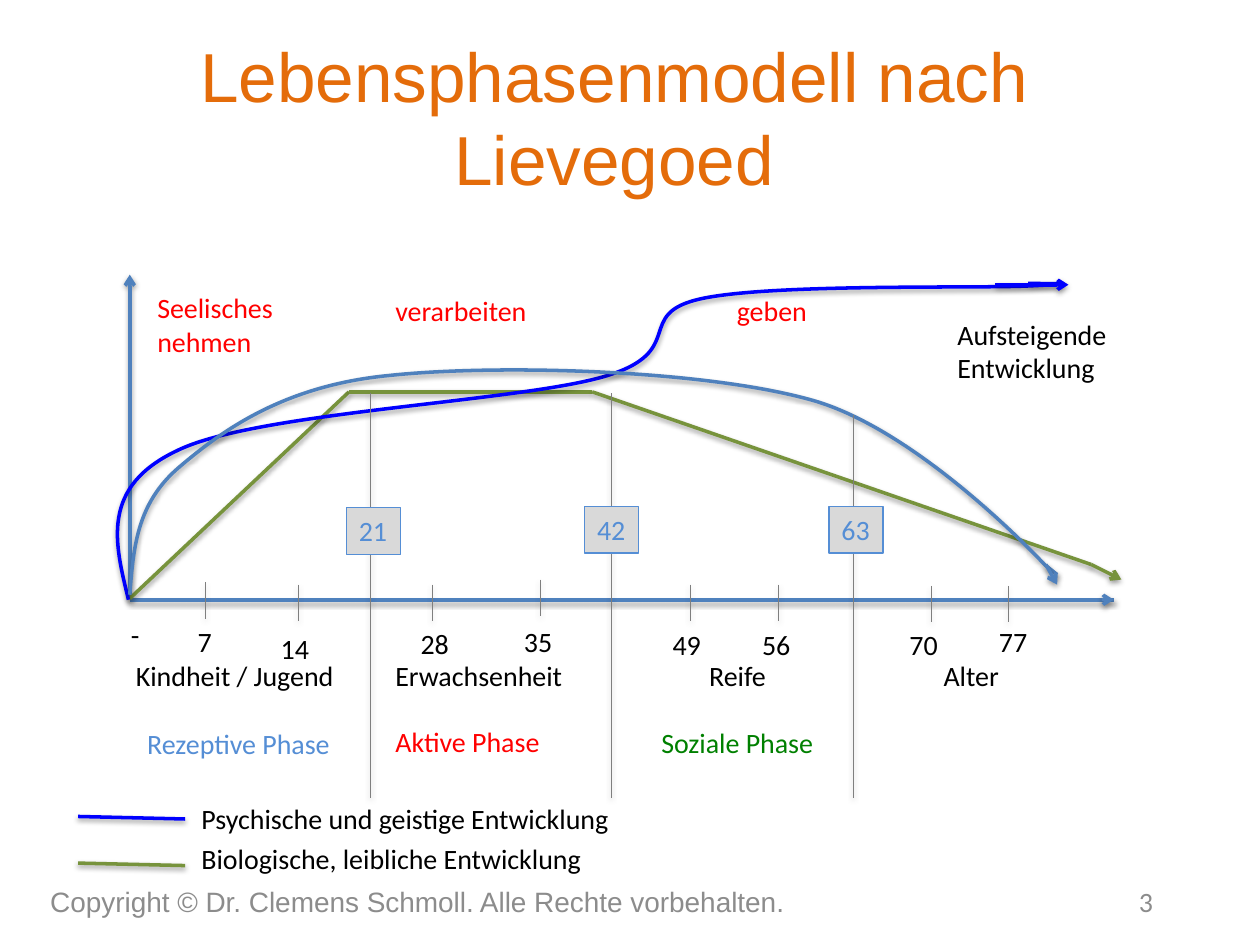
from dataclasses import dataclass

from lxml.etree import SubElement
from pptx import Presentation
from pptx.dml.color import RGBColor
from pptx.enum.shapes import MSO_CONNECTOR, MSO_SHAPE
from pptx.enum.text import MSO_ANCHOR, MSO_AUTO_SIZE, PP_ALIGN
from pptx.oxml.ns import qn
from pptx.util import Inches, Pt

BLACK, RED, GREEN, GREY = "000000", "FF0000", "008000", "8C8C8C"
AXIS, MIND, BODY, GUIDE = "4F81BD", "0000FF", "77933C", "7F7F7F"
PHASE, BADGE = "558ED5", "D9D9D9"
LINE_HEIGHT = 0.37
TICK_LENGTH = 0.29
GUIDE_BOTTOM = 6.33

Point = tuple[float, float]


@dataclass(frozen=True)
class Label:
    text: str
    left: float
    top: float
    width: float
    color: str = BLACK
    height: float = LINE_HEIGHT


@dataclass(frozen=True)
class Tick:
    age: str
    x: float
    top: float
    label_left: float
    label_top: float
    label_width: float = 0.43


@dataclass(frozen=True)
class Threshold:
    age: str
    x: float
    top: float
    badge_left: float
    badge_top: float


@dataclass(frozen=True)
class Stroke:
    start: Point
    end: Point
    color: str
    arrow: bool = False
    weight: float = 2


@dataclass(frozen=True)
class Curve:
    bounds: tuple[float, float, float, float]
    start: Point
    bends: list[tuple[Point, Point, Point]]
    color: str
    tail: tuple[Point, ...] = ()


AXES = [
    Stroke((1.03, 4.75), (1.03, 2.18), AXIS, arrow=True),
    Stroke((1.03, 4.76), (8.84, 4.76), AXIS),
]
TICKS = [
    Tick("7", 1.63, 4.62, 1.47, 4.91, 0.32),
    Tick("14", 2.37, 4.64, 2.13, 4.96),
    Tick("28", 3.43, 4.64, 3.24, 4.92),
    Tick("35", 4.29, 4.6, 4.06, 4.91),
    Tick("49", 5.48, 4.64, 5.24, 4.93),
    Tick("56", 6.18, 4.64, 5.95, 4.93),
    Tick("70", 7.39, 4.65, 7.12, 4.93),
    Tick("77", 8, 4.65, 7.83, 4.91),
]
THRESHOLDS = [
    Threshold("21", 2.94, 3.12, 2.75, 4.03),
    Threshold("42", 4.85, 3.12, 4.64, 4.02),
    Threshold("63", 6.77, 3.29, 6.58, 4.02),
]
BODY_POINTS = [(1.03, 4.75), (2.77, 3.11), (4.7, 3.11), (8.66, 4.48), (8.9, 4.6)]
MIND_CURVE = Curve(
    (0.93, 2.25, 7.48, 2.51),
    (1.02, 4.76),
    [
        ((0.91, 4.31), (0.79, 3.86), (1.42, 3.57)),
        ((2.05, 3.27), (4.1, 3.19), (4.79, 2.99)),
        ((5.48, 2.79), (5.01, 2.49), (5.57, 2.37)),
        ((6.13, 2.25), (7.73, 2.29), (8.16, 2.27)),
        ((8.59, 2.25), (8.37, 2.25), (8.16, 2.25)),
    ],
    MIND,
)
LIFE_CURVE = Curve(
    (1.03, 2.93, 7.36, 1.79),
    (1.03, 4.72),
    [
        ((1.06, 4.36), (1.08, 4), (1.42, 3.71)),
        ((1.76, 3.42), (2.25, 3.06), (3.09, 2.98)),
        ((3.93, 2.89), (5.59, 2.93), (6.46, 3.18)),
        ((7.32, 3.43), (8.29, 4.48), (8.29, 4.48)),
    ],
    AXIS,
    tail=((8.39, 4.56),),
)
ARROW_TIPS = [
    Stroke((7.9, 2.26), (8.48, 2.26), MIND, arrow=True),
    Stroke((8.3, 4.48), (8.39, 4.64), AXIS, arrow=True),
    Stroke((8.81, 4.76), (8.84, 4.76), AXIS, arrow=True),
]
LEGEND_KEYS = [
    Stroke((0.62, 6.48), (1.47, 6.5), MIND),
    Stroke((0.62, 6.85), (1.47, 6.87), BODY),
]
LABELS = [
    Label("-", 0.94, 4.85, 0.27),
    Label("Kindheit / Jugend", 0.98, 5.18, 1.79),
    Label("Erwachsenheit", 3.04, 5.18, 1.54),
    Label("Reife", 5.53, 5.18, 0.67),
    Label("Alter", 7.39, 5.18, 0.65),
    Label("Seelisches\nnehmen", 1.15, 2.26, 1.13, RED, 0.64),
    Label("verarbeiten", 3.04, 2.28, 1.26, RED),
    Label("geben", 5.75, 2.28, 0.77, RED),
    Label("Aufsteigende\nEntwicklung", 7.5, 2.47, 1.41, BLACK, 0.64),
    Label("Rezeptive Phase", 1.07, 5.72, 1.68, PHASE),
    Label("Aktive Phase", 3.04, 5.7, 1.36, RED),
    Label("Soziale Phase", 5.15, 5.71, 1.43, GREEN),
    Label("Psychische und geistige Entwicklung", 1.5, 6.31, 3.49),
    Label("Biologische, leibliche Entwicklung", 1.5, 6.63, 3.25),
]


def rgb(color: str) -> RGBColor:
    return RGBColor.from_string(color)


def write(frame, text, *, color=BLACK, size=16, font="Calibri", align=PP_ALIGN.LEFT,
          anchor=MSO_ANCHOR.TOP, wrap=False) -> None:
    frame.text = text
    frame.word_wrap = wrap
    frame.auto_size = MSO_AUTO_SIZE.NONE if wrap else MSO_AUTO_SIZE.SHAPE_TO_FIT_TEXT
    frame.vertical_anchor = anchor
    for paragraph in frame.paragraphs:
        paragraph.alignment = align
        paragraph.font.name = font
        paragraph.font.size = Pt(size)
        paragraph.font.color.rgb = rgb(color)


def add_label(shapes, label: Label, **text_format) -> None:
    box = shapes.add_textbox(*map(Inches, (label.left, label.top, label.width, label.height)))
    write(box.text_frame, label.text, color=label.color, **text_format)


def add_soft_shadow(shape) -> None:
    effects = SubElement(shape._element.spPr, qn("a:effectLst"))
    shadow = SubElement(effects, qn("a:outerShdw"), blurRad=str(Pt(3.1)), dist=str(Pt(1.6)),
                        dir="5400000", rotWithShape="0")
    black = SubElement(shadow, qn("a:srgbClr"), val=BLACK)
    SubElement(black, qn("a:alpha"), val="38000")


def style_line(shape, color: str, weight: float) -> None:
    shape.line.color.rgb = rgb(color)
    shape.line.width = Pt(weight)


def add_stroke(shapes, stroke: Stroke) -> None:
    ends = map(Inches, (*stroke.start, *stroke.end))
    connector = shapes.add_connector(MSO_CONNECTOR.STRAIGHT, *ends)
    style_line(connector, stroke.color, stroke.weight)
    if stroke.arrow:
        SubElement(connector.line._get_or_add_ln(), qn("a:tailEnd"), type="arrow")
    add_soft_shadow(connector)


def add_curve(shapes, curve: Curve) -> None:
    left, top, width, height = map(Inches, curve.bounds)
    knots = [bend[-1] for bend in curve.bends]
    builder = shapes.build_freeform(*map(Inches, curve.start))
    builder.add_line_segments([tuple(map(Inches, knot)) for knot in knots], close=False)
    outline = builder.convert_to_shape()
    outline.left, outline.top, outline.width, outline.height = left, top, width, height

    track = outline._element.spPr.find(".//" + qn("a:path"))
    track.clear()
    track.set("w", str(width))
    track.set("h", str(height))
    moves = [("a:moveTo", (curve.start,))]
    moves += [("a:cubicBezTo", bend) for bend in curve.bends]
    moves += [("a:lnTo", (point,)) for point in curve.tail]
    for tag, points in moves:
        move = SubElement(track, qn(tag))
        for x, y in points:
            SubElement(move, qn("a:pt"), x=str(Inches(x) - left), y=str(Inches(y) - top))

    outline.fill.background()
    style_line(outline, curve.color, 2)
    add_soft_shadow(outline)


def add_badge(shapes, threshold: Threshold) -> None:
    badge = shapes.add_shape(MSO_SHAPE.RECTANGLE, Inches(threshold.badge_left),
                             Inches(threshold.badge_top), Inches(0.43), Inches(LINE_HEIGHT))
    badge.shadow.inherit = False
    badge.fill.solid()
    badge.fill.fore_color.rgb = rgb(BADGE)
    style_line(badge, PHASE, 0.75)
    write(badge.text_frame, threshold.age, color=PHASE)


def main() -> None:
    deck = Presentation()
    deck.slide_width, deck.slide_height = Inches(10), Inches(7.5)
    slide = deck.slides.add_slide(deck.slide_layouts[5])
    shapes = slide.shapes

    title = shapes.title
    title.left, title.top, title.width, title.height = map(Inches, (0.5, 0.3, 8.75, 1.25))
    write(title.text_frame, "Lebensphasenmodell nach Lievegoed", color="E46C0A", size=39.6,
          font="Arial", align=PP_ALIGN.CENTER, anchor=MSO_ANCHOR.MIDDLE, wrap=True)

    ticks = [Stroke((t.x, t.top), (t.x, t.top + TICK_LENGTH), GUIDE, weight=0.25) for t in TICKS]
    body = [Stroke(start, end, BODY, arrow=end == BODY_POINTS[-1])
            for start, end in zip(BODY_POINTS, BODY_POINTS[1:])]
    guides = [Stroke((t.x, t.top), (t.x, GUIDE_BOTTOM), GUIDE, weight=0.25) for t in THRESHOLDS]

    for stroke in AXES + ticks + body:
        add_stroke(shapes, stroke)
    for curve in (MIND_CURVE, LIFE_CURVE):
        add_curve(shapes, curve)
    for stroke in ARROW_TIPS + guides + LEGEND_KEYS:
        add_stroke(shapes, stroke)

    ages = [Label(t.age, t.label_left, t.label_top, t.label_width) for t in TICKS]
    for label in ages + LABELS:
        add_label(shapes, label)
    for threshold in THRESHOLDS:
        add_badge(shapes, threshold)

    copyright_line = "Copyright © Dr. Clemens Schmoll. Alle Rechte vorbehalten."
    add_label(shapes, Label(copyright_line, 0.3, 6.95, 6.36, GREY, 0.4),
              font="Arial", anchor=MSO_ANCHOR.MIDDLE, wrap=True)
    add_label(shapes, Label("3", 6.92, 6.95, 2.33, GREY, 0.4),
              align=PP_ALIGN.RIGHT, anchor=MSO_ANCHOR.MIDDLE, wrap=True)

    deck.save("out.pptx")


if __name__ == "__main__":
    main()
